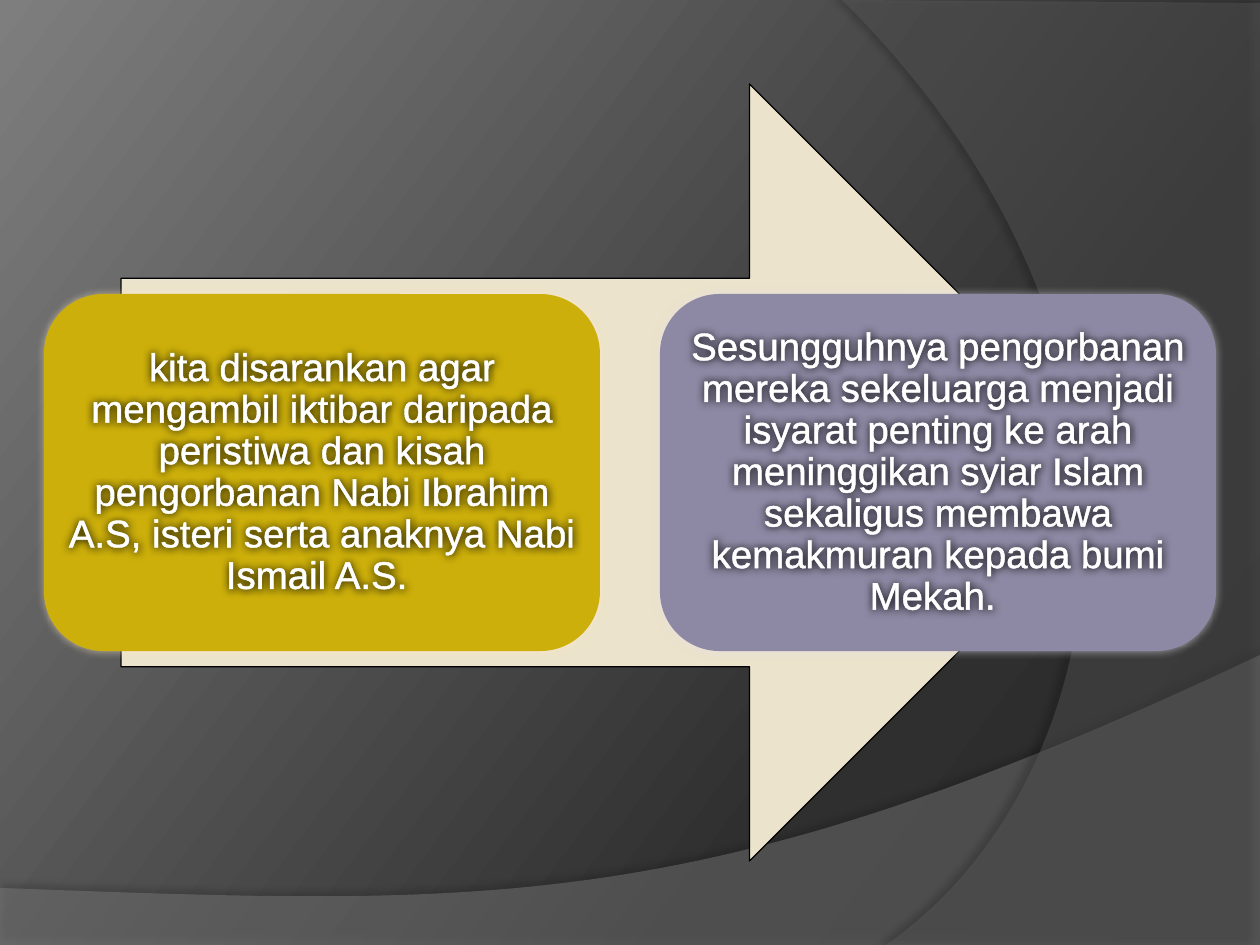
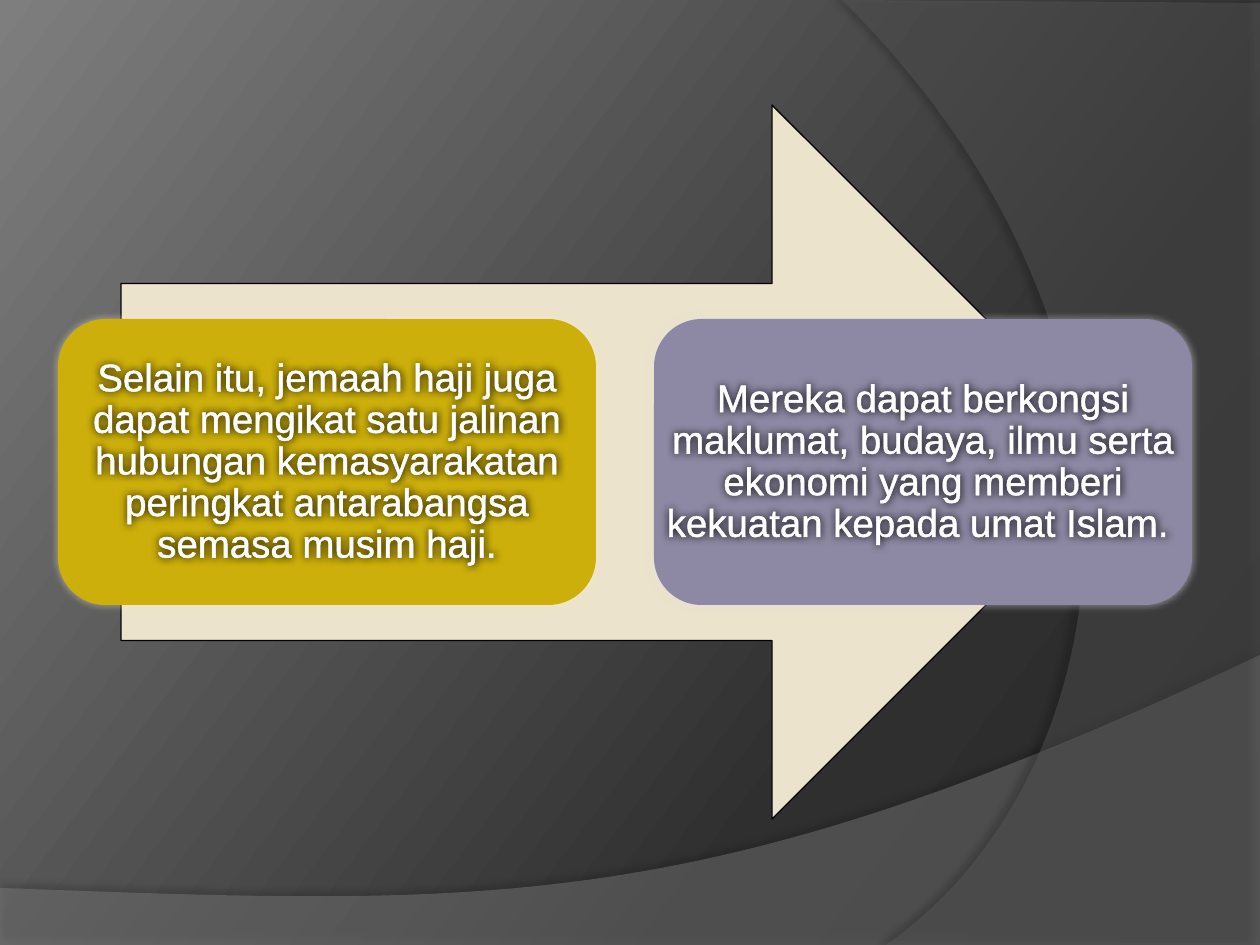
from copy import deepcopy
from dataclasses import dataclass

from lxml.etree import SubElement
from pptx import Presentation
from pptx.dml.color import RGBColor
from pptx.enum.shapes import MSO_SHAPE
from pptx.enum.text import MSO_ANCHOR, PP_ALIGN
from pptx.oxml.ns import qn
from pptx.util import Emu, Pt

PX = 914400 / 126
SLIDE_WIDTH, SLIDE_HEIGHT = 1260, 945
FONT = "Arial"
WHITE, BLACK, CREAM = "FFFFFF", "000000", "ECE3CC"
BACKGROUND_STOPS = [(0, "282828"), (0.3, "2F2F2F"), (1, "7E7E7E")]
CURVE_STEPS = 60

Point = tuple[float, float]


@dataclass(frozen=True)
class Shadow:
    color: str
    alpha: int
    blur: float
    distance: float = 0
    direction: int = 0


@dataclass(frozen=True)
class Band:
    """Straight corners, closed by a Bezier curve from the last corner."""
    corners: list[Point]
    curve: list[Point]
    color: str
    alpha: int
    shadow: Shadow


@dataclass(frozen=True)
class Area:
    left: int
    top: int
    width: int
    height: int

    def emu(self) -> list[Emu]:
        return [px(value) for value in (self.left, self.top, self.width, self.height)]


@dataclass(frozen=True)
class CardStyle:
    fill: str
    halo: Shadow


@dataclass(frozen=True)
class ArrowSlide:
    arrow: Area
    card_left: int
    card_width: int
    card_height: int
    card_gap: int
    texts: list[str]


BANDS = [
    Band([(0, 888), (0, 945), (1260, 945), (1260, 655)],
         [(704, 919), (493, 906), (0, 888)],
         "7F7F7F", 45, Shadow(BLACK, 35, 4, 3.5, 270)),
    Band([(1260, 3), (1260, 945), (886, 945)],
         [(1123, 780), (1193, 347), (842, 0)],
         "5E5E5E", 40, Shadow(BLACK, 45, 4, 4, 180)),
]
CARD_STYLES = [
    CardStyle("CCAF0A", Shadow("FFEBC5", 60, 5)),
    CardStyle("8D89A4", Shadow("E4E0EC", 60, 5)),
]
TEXT_SHADOW = Shadow(BLACK, 70, 5)

ARROW_SLIDES = [
    ArrowSlide(
        Area(121, 84, 1017, 777), 44, 556, 357, 60,
        ["kita disarankan agar mengambil iktibar daripada peristiwa dan kisah "
         "pengorbanan Nabi Ibrahim A.S, isteri serta anaknya Nabi Ismail A.S. ",
         "Sesungguhnya pengorbanan mereka sekeluarga menjadi isyarat penting ke arah "
         "meninggikan syiar Islam sekaligus membawa kemakmuran kepada bumi Mekah. "]),
    ArrowSlide(
        Area(121, 105, 1008, 714), 58, 538, 286, 58,
        ["Selain itu, jemaah haji juga dapat mengikat satu jalinan hubungan "
         "kemasyarakatan peringkat antarabangsa semasa musim haji.",
         "Mereka dapat berkongsi maklumat, budaya, ilmu serta ekonomi yang memberi "
         "kekuatan kepada umat Islam. "]),
]


def px(value: float) -> Emu:
    return Emu(round(value * PX))


def rgb(color: str) -> RGBColor:
    return RGBColor.from_string(color)


def add_alpha(color_element, percent: int) -> None:
    SubElement(color_element, qn("a:alpha"), val=str(percent * 1000))


def set_shadow(shape, shadow: Shadow | None) -> None:
    shape.shadow.inherit = False
    if shadow is None:
        return
    effects = shape.element.spPr.find(qn("a:effectLst"))
    outer = SubElement(effects, qn("a:outerShdw"), blurRad=str(Pt(shadow.blur)),
                       dist=str(Pt(shadow.distance)), dir=str(shadow.direction * 60000),
                       algn="ctr", rotWithShape="0")
    add_alpha(SubElement(outer, qn("a:srgbClr"), val=shadow.color), shadow.alpha)


def style_shape(shape, fill: str, line: str | None = None,
                shadow: Shadow | None = None) -> None:
    shape.fill.solid()
    shape.fill.fore_color.rgb = rgb(fill)
    if line is None:
        shape.line.fill.background()
    else:
        shape.line.color.rgb = rgb(line)
        shape.line.width = Pt(0.75)
    set_shadow(shape, shadow)


def set_background(master) -> None:
    fill = master.background.fill
    fill.gradient()
    fill.gradient_angle = 143
    stop_list = master.element.find(".//" + qn("a:gsLst"))
    stop_list.append(deepcopy(stop_list[-1]))
    for stop, (position, color) in zip(fill.gradient_stops, BACKGROUND_STOPS):
        stop.position = position
        stop.color.rgb = rgb(color)


def bezier_points(start: Point, curve: list[Point]) -> list[Point]:
    points = []
    for step in range(1, CURVE_STEPS + 1):
        t = step / CURVE_STEPS
        weights = ((1 - t) ** 3, 3 * t * (1 - t) ** 2, 3 * t ** 2 * (1 - t), t ** 3)
        points.append(tuple(sum(weight * point[axis]
                                for weight, point in zip(weights, [start, *curve]))
                            for axis in (0, 1)))
    return points


def add_band(slide, band: Band) -> None:
    outline = band.corners + bezier_points(band.corners[-1], band.curve)
    start, *others = [(px(x), px(y)) for x, y in outline]
    builder = slide.shapes.build_freeform(*start)
    builder.add_line_segments(others, close=True)
    shape = builder.convert_to_shape()
    style_shape(shape, band.color, shadow=band.shadow)
    add_alpha(shape.element.spPr.find(qn("a:solidFill"))[0], band.alpha)


def add_text(slide, area: Area, text: str, *, size: int = 22, color: str = WHITE,
             inset: int = 11, outline: float = 1.45) -> None:
    box = slide.shapes.add_textbox(*area.emu())
    set_shadow(box, TEXT_SHADOW)
    frame = box.text_frame
    frame.word_wrap = True
    frame.vertical_anchor = MSO_ANCHOR.MIDDLE
    frame.margin_left = frame.margin_right = px(inset)
    frame.margin_top = frame.margin_bottom = px(inset)
    paragraph = frame.paragraphs[0]
    paragraph.alignment = PP_ALIGN.CENTER
    paragraph.line_spacing = 0.9
    run = paragraph.add_run()
    run.text = text
    run.font.name = FONT
    run.font.size = Pt(size)
    run.font.color.rgb = rgb(color)
    line = run.font.element.makeelement(qn("a:ln"), {"w": str(Pt(outline))}) \
        if hasattr(run.font, "element") else None
    properties = paragraph.runs[0]._r.get_or_add_rPr()
    if line is None:
        line = properties.makeelement(qn("a:ln"), {"w": str(Pt(outline))})
    SubElement(SubElement(line, qn("a:solidFill")), qn("a:srgbClr"), val=color)
    properties.insert(0, line)


def add_card(slide, area: Area, style: CardStyle, text: str) -> None:
    card = slide.shapes.add_shape(MSO_SHAPE.ROUNDED_RECTANGLE, *area.emu())
    style_shape(card, style.fill, shadow=style.halo)
    add_text(slide, area, text)


def add_arrow_slide(presentation, content: ArrowSlide) -> None:
    slide = presentation.slides.add_slide(presentation.slide_layouts[6])
    for band in BANDS:
        add_band(slide, band)
    arrow = slide.shapes.add_shape(MSO_SHAPE.RIGHT_ARROW, *content.arrow.emu())
    style_shape(arrow, CREAM, line=BLACK)
    top = content.arrow.top + (content.arrow.height - content.card_height) // 2
    for index, (style, text) in enumerate(zip(CARD_STYLES, content.texts)):
        left = content.card_left + index * (content.card_width + content.card_gap)
        add_card(slide, Area(left, top, content.card_width, content.card_height),
                 style, text)


def main() -> None:
    presentation = Presentation()
    presentation.slide_width = px(SLIDE_WIDTH)
    presentation.slide_height = px(SLIDE_HEIGHT)
    set_background(presentation.slide_master)
    for content in ARROW_SLIDES:
        add_arrow_slide(presentation, content)
    presentation.save("out.pptx")


if __name__ == "__main__":
    main()
